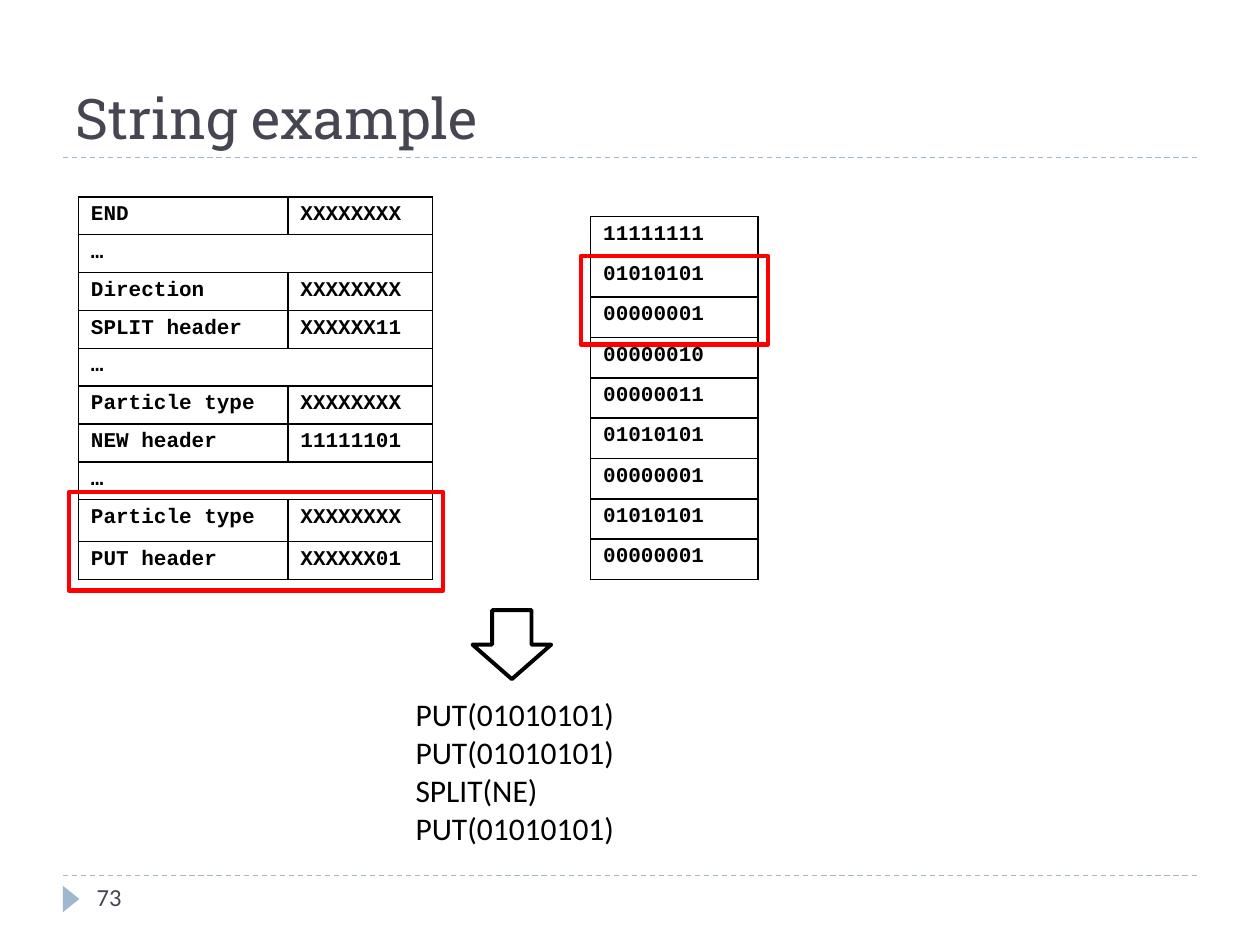
import lxml.etree
import pptx
import pptx.dml.color
import pptx.enum.dml
import pptx.enum.shapes
import pptx.enum.text
import pptx.oxml.ns
import pptx.util

Pt = pptx.util.Pt
RGBColor = pptx.dml.color.RGBColor
SHAPE = pptx.enum.shapes.MSO_SHAPE
ANCHOR = pptx.enum.text.MSO_ANCHOR
qn = pptx.oxml.ns.qn

BLACK = RGBColor(0x00, 0x00, 0x00)
RED = RGBColor(0xFF, 0x00, 0x00)
SLATE = RGBColor(0x46, 0x46, 0x53)
PALE_BLUE = RGBColor(0x9F, 0xB8, 0xCD)

ELLIPSIS_ROW = ("…",)
HEADER_ROWS = [
    ("END", "XXXXXXXX"),
    ELLIPSIS_ROW,
    ("Direction", "XXXXXXXX"),
    ("SPLIT header", "XXXXXX11"),
    ELLIPSIS_ROW,
    ("Particle type", "XXXXXXXX"),
    ("NEW header", "11111101"),
    ELLIPSIS_ROW,
    ("Particle type", "XXXXXXXX"),
    ("PUT header", "XXXXXX01"),
]
BYTES = ["11111111", "01010101", "00000001", "00000010", "00000011",
         "01010101", "00000001", "01010101", "00000001"]


def add_bit_table(page, left, top, widths, heights, rows):
    """Add a black-ruled table; a row with too few entries is merged across."""
    frame = page.shapes.add_table(len(rows), len(widths), Pt(left), Pt(top),
                                  Pt(sum(widths)), Pt(sum(heights)))
    table = frame.table
    table.first_row = table.horz_banding = False
    for column, width in zip(table.columns, widths):
        column.width = Pt(width)
    for index, (texts, height) in enumerate(zip(rows, heights)):
        table.rows[index].height = Pt(height)
        for column, text in enumerate(texts):
            table.cell(index, column).text = text
        if len(texts) < len(widths):
            table.cell(index, 0).merge(table.cell(index, len(widths) - 1))
    for cell in table.iter_cells():
        properties = cell._tc.get_or_add_tcPr()
        for side in ("lnL", "lnR", "lnT", "lnB"):
            border = lxml.etree.SubElement(properties, qn(f"a:{side}"), w=str(Pt(1)))
            solid = lxml.etree.SubElement(border, qn("a:solidFill"))
            lxml.etree.SubElement(solid, qn("a:srgbClr"), val=str(BLACK))
        cell.fill.background()
        font = cell.text_frame.paragraphs[0].font
        font.name, font.size, font.bold = "Courier New", Pt(12), True
        font.color.rgb = BLACK


def add_text(page, left, top, width, height, lines, size, color, wrap):
    box = page.shapes.add_textbox(Pt(left), Pt(top), Pt(width), Pt(height))
    box.text_frame.word_wrap = wrap
    box.text_frame.text = "\n".join(lines)
    for para in box.text_frame.paragraphs:
        para.font.name, para.font.size = "Calibri", Pt(size)
        para.font.color.rgb = color


deck = pptx.Presentation()
deck.slide_width, deck.slide_height = Pt(720), Pt(540)
page = deck.slides.add_slide(deck.slide_layouts[5])

# Dashed rules and page marker
for y in (500.4, 90):
    rule = page.shapes.add_connector(pptx.enum.shapes.MSO_CONNECTOR.STRAIGHT,
                                     Pt(36), Pt(y), Pt(684), Pt(y))
    rule.line.color.rgb = PALE_BLUE
    rule.line.width = Pt(0.75)
    rule.line.dash_style = pptx.enum.dml.MSO_LINE.DASH
    lxml.etree.SubElement(rule._element.spPr, qn("a:effectLst"))

marker = page.shapes.add_shape(SHAPE.ISOSCELES_TRIANGLE, Pt(33.1), Pt(509), Pt(15.1), Pt(9.4))
marker.rotation = 90
marker.shadow.inherit = False
marker.fill.solid()
marker.fill.fore_color.rgb = PALE_BLUE
marker.line.fill.background()

# Title and page number
title = page.shapes.title
title.left, title.top, title.width, title.height = Pt(36), Pt(12.2), Pt(648), Pt(77.8)
title.text_frame.text = "String example"
title.text_frame.vertical_anchor = ANCHOR.BOTTOM
para = title.text_frame.paragraphs[0]
para.alignment = pptx.enum.text.PP_ALIGN.LEFT
para.font.name, para.font.size = "Roboto Slab", Pt(32)
para.font.color.rgb = SLATE

add_text(page, 48.2, 500.4, 156, 28.8, ["73"], 14, SLATE, True)

# Header layout on the left, string bytes on the right
add_bit_table(page, 44.8, 112.5, [119.7, 82.8], [20.8] * 8 + [24, 20.8], HEADER_ROWS)
add_bit_table(page, 337.5, 123.7, [95.8], [23.05] * len(BYTES), [(byte,) for byte in BYTES])

# Red frames around the instruction being decoded, and the arrow to the result
for kind, left, top, width, height, color, weight in [
    (SHAPE.RECTANGLE, 39.4, 281.2, 213.8, 56.3, RED, 2.5),
    (SHAPE.RECTANGLE, 332, 146.2, 106.9, 50.6, RED, 2.5),
    (SHAPE.DOWN_ARROW, 270, 348.7, 45, 39.4, BLACK, 2.25),
]:
    outline = page.shapes.add_shape(kind, Pt(left), Pt(top), Pt(width), Pt(height))
    outline.shadow.inherit = False
    outline.fill.background()
    outline.line.color.rgb = color
    outline.line.width = Pt(weight)

add_text(page, 230.4, 393.8, 144, 94.3,
         ["PUT(01010101)", "PUT(01010101)", "SPLIT(NE)", "PUT(01010101)"],
         18, BLACK, False)

deck.save("out.pptx")
